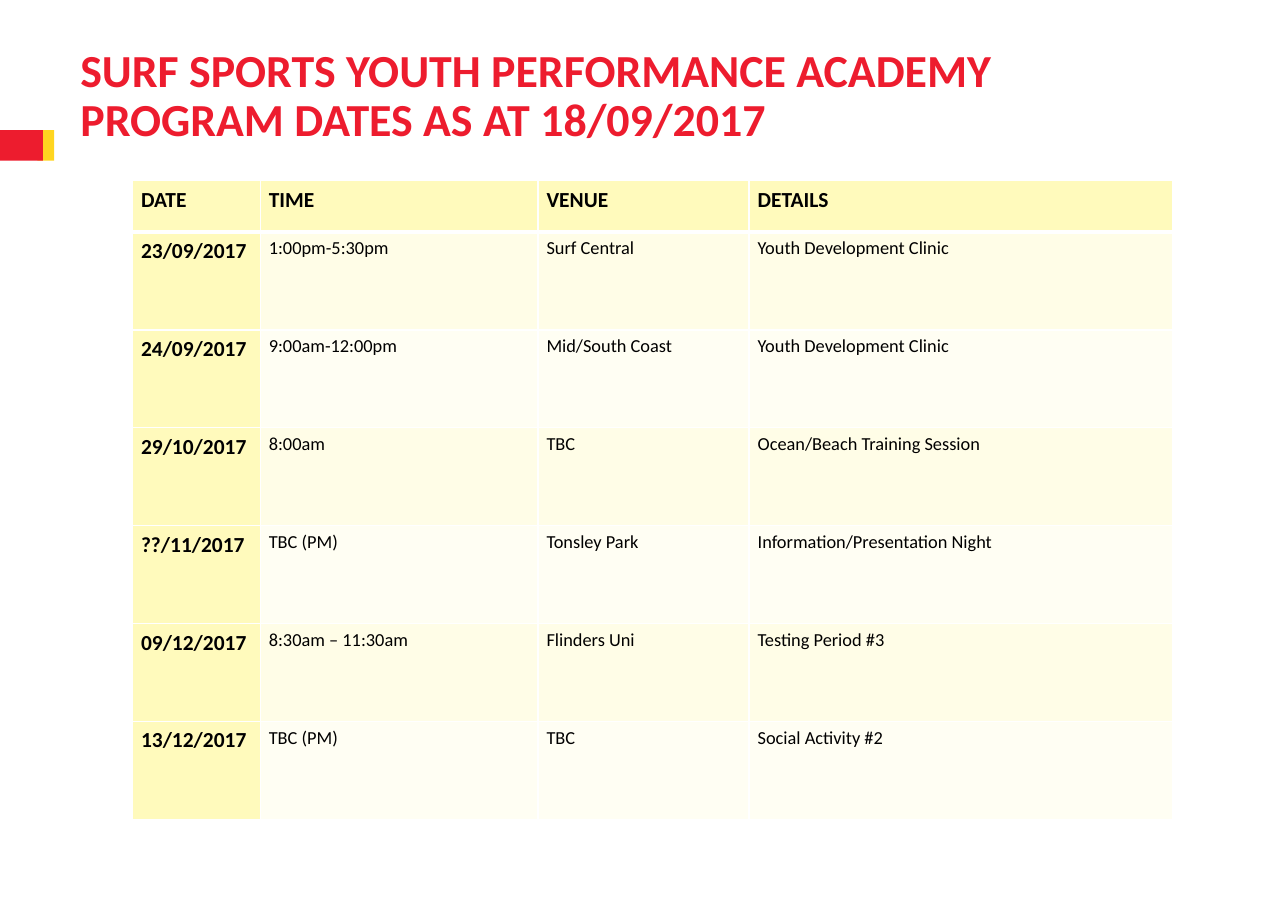
from dataclasses import dataclass

from lxml import etree
from pptx import Presentation
from pptx.dml.color import RGBColor
from pptx.enum.shapes import MSO_SHAPE
from pptx.enum.text import MSO_ANCHOR
from pptx.oxml.ns import qn
from pptx.util import Pt

RECT = MSO_SHAPE.RECTANGLE
TOP = MSO_ANCHOR.TOP


@dataclass(frozen=True)
class Theme:
    font: str = "Calibri"
    red: str = "ED1C2E"
    yellow: str = "FFD520"
    text: str = "000000"
    border: str = "FFFFFF"
    heading_fill: str = "FFFABC"
    bands: tuple = ("FFFDE7", "FFFEF3")
    title_size: int = 30
    heading_size: int = 14
    body_size: int = 12


THEME = Theme()

TITLE = "SURF SPORTS YOUTH PERFORMANCE ACADEMY PROGRAM DATES AS AT 18/09/2017"
COLUMN_WIDTHS = (83.5, 181.5, 138, 276.5)
HEADER_HEIGHT = 33.6
ROW_HEIGHT = 64
PROGRAM = (
    ("DATE", "TIME", "VENUE", "DETAILS"),
    ("23/09/2017", "1:00pm-5:30pm", "Surf Central", "Youth Development Clinic"),
    ("24/09/2017", "9:00am-12:00pm", "Mid/South Coast", "Youth Development Clinic"),
    ("29/10/2017", "8:00am", "TBC", "Ocean/Beach Training Session"),
    ("??/11/2017", "TBC (PM)", "Tonsley Park", "Information/Presentation Night"),
    ("09/12/2017", "8:30am – 11:30am", "Flinders Uni", "Testing Period #3"),
    ("13/12/2017", "TBC (PM)", "TBC", "Social Activity #2"),
)


def format_text(p, size, color, bold, line_spacing):
    p.line_spacing = line_spacing
    for r in p.runs:
        r.font.name = THEME.font
        r.font.size = Pt(size)
        r.font.bold = bold
        r.font.color.rgb = RGBColor.from_string(color)


def add_bar(slide, left, top, width, height, color):
    sp = slide.shapes.add_shape(RECT, Pt(left), Pt(top), Pt(width), Pt(height))
    sp.shadow.inherit = False
    sp.fill.solid()
    sp.fill.fore_color.rgb = RGBColor.from_string(color)
    sp.line.fill.background()


def add_title(slide, left, top, width, height):
    box = slide.shapes.add_textbox(Pt(left), Pt(top), Pt(width), Pt(height))
    tf = box.text_frame
    tf.word_wrap = True
    tf.vertical_anchor = TOP
    tf.margin_left = tf.margin_right = tf.margin_top = tf.margin_bottom = 0
    tf.text = TITLE
    format_text(tf.paragraphs[0], THEME.title_size, THEME.red, True, Pt(32))


def set_borders(cell, top, bottom):
    """Draw all four sides; top and bottom are line widths in points."""
    tc_pr = cell._tc.get_or_add_tcPr()
    for side, width in (("L", 1), ("R", 1), ("T", top), ("B", bottom)):
        ln = etree.SubElement(tc_pr, qn(f"a:ln{side}"), w=str(Pt(width)))
        fill = etree.SubElement(ln, qn("a:solidFill"))
        etree.SubElement(fill, qn("a:srgbClr"), val=THEME.border)


def fill_cell(cell, text, row, col):
    heading = row == 0 or col == 0
    cell.margin_left = Pt(5.6)
    cell.margin_right = Pt(2.9)
    cell.margin_top = cell.margin_bottom = Pt(1.4)
    cell.vertical_anchor = TOP
    set_borders(cell, top=3 if row == 1 else 1, bottom=3 if row == 0 else 1)
    color = THEME.heading_fill if heading else THEME.bands[(row - 1) % 2]
    cell.fill.solid()
    cell.fill.fore_color.rgb = RGBColor.from_string(color)
    cell.text_frame.text = text
    size = THEME.heading_size if heading else THEME.body_size
    format_text(cell.text_frame.paragraphs[0], size, THEME.text, heading, 1.15)


def add_program_table(slide, left, top):
    body_rows = len(PROGRAM) - 1
    height = HEADER_HEIGHT + ROW_HEIGHT * body_rows
    table = slide.shapes.add_table(
        len(PROGRAM), len(COLUMN_WIDTHS),
        Pt(left), Pt(top), Pt(sum(COLUMN_WIDTHS)), Pt(height),
    ).table
    table.horz_banding = False
    for column, width in zip(table.columns, COLUMN_WIDTHS):
        column.width = Pt(width)
    for row, texts in enumerate(PROGRAM):
        table.rows[row].height = Pt(ROW_HEIGHT if row else HEADER_HEIGHT)
        for col, text in enumerate(texts):
            fill_cell(table.cell(row, col), text, row, col)


def main():
    prs = Presentation()
    prs.slide_width = Pt(841.68)
    prs.slide_height = Pt(595.44)
    slide = prs.slides.add_slide(prs.slide_layouts[6])
    add_bar(slide, 24.5, 85, 11, 20, THEME.yellow)
    add_bar(slide, 0, 85, 28, 20, THEME.red)
    add_title(slide, 52.5, 31, 719, 76)
    add_program_table(slide, 86.6, 118.1)
    prs.save("out.pptx")


if __name__ == "__main__":
    main()
